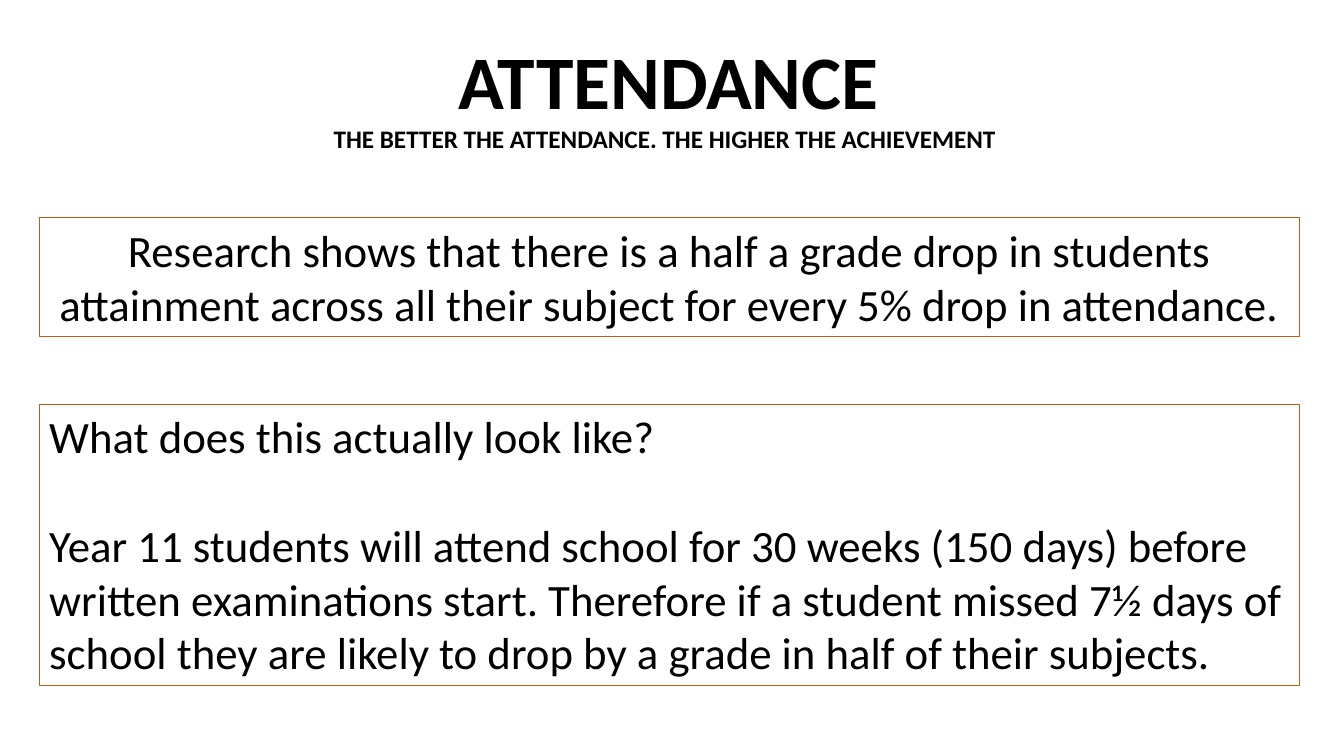
from dataclasses import dataclass

from pptx import Presentation
from pptx.dml.color import RGBColor
from pptx.enum.text import MSO_ANCHOR, PP_ALIGN
from pptx.util import Inches, Pt

LEFT, CENTER = PP_ALIGN.LEFT, PP_ALIGN.CENTER
TOP, MIDDLE = MSO_ANCHOR.TOP, MSO_ANCHOR.MIDDLE


@dataclass(frozen=True)
class Theme:
    font: str = "Calibri"
    ink: RGBColor = RGBColor(0x00, 0x00, 0x00)
    outline: RGBColor = RGBColor(0xC5, 0x5A, 0x11)
    outline_width: Pt = Pt(0.75)
    title: Pt = Pt(54)
    subtitle: Pt = Pt(18)
    body: Pt = Pt(32)
    question_gap: Pt = Pt(39)


theme = Theme()


def add_text(page, place, lines, size, align=CENTER, bold=False, anchor=TOP):
    box = page.shapes.add_textbox(*[Inches(length) for length in place])
    frame = box.text_frame
    frame.word_wrap = True
    frame.vertical_anchor = anchor
    frame.text = "\n".join(lines)
    for para in frame.paragraphs:
        para.alignment = align
        para.font.name = theme.font
        para.font.size = size
        para.font.bold = bold
        para.font.color.rgb = theme.ink
    return box


deck = Presentation()
deck.slide_width = Inches(13.33)
deck.slide_height = Inches(7.5)
page = deck.slides.add_slide(deck.slide_layouts[6])

# Heading
title = add_text(page, (0.88, 0.12, 11.5, 1.45), ["ATTENDANCE"],
                 theme.title, bold=True, anchor=MIDDLE)
title.text_frame.paragraphs[0].line_spacing = 0.9
add_text(page, (1.16, 1.17, 10.87, 0.4),
         ["THE BETTER THE ATTENDANCE. THE HIGHER THE ACHIEVEMENT"],
         theme.subtitle, bold=True)

# Outlined statements
research = add_text(
    page, (0.39, 2.16, 12.5, 1.18),
    ["Research shows that there is a half a grade drop in students attainment "
     "across all their subject for every 5% drop in attendance."],
    theme.body)
example = add_text(
    page, (0.39, 4.01, 12.5, 2.79),
    ["What does this actually look like?",
     "Year 11 students will attend school for 30 weeks (150 days) before "
     "written examinations start. Therefore if a student missed 7½ days of "
     "school they are likely to drop by a grade in half of their subjects."],
    theme.body, align=LEFT)
example.text_frame.paragraphs[0].space_after = theme.question_gap

for statement in (research, example):
    statement.line.color.rgb = theme.outline
    statement.line.width = theme.outline_width

deck.save("out.pptx")
